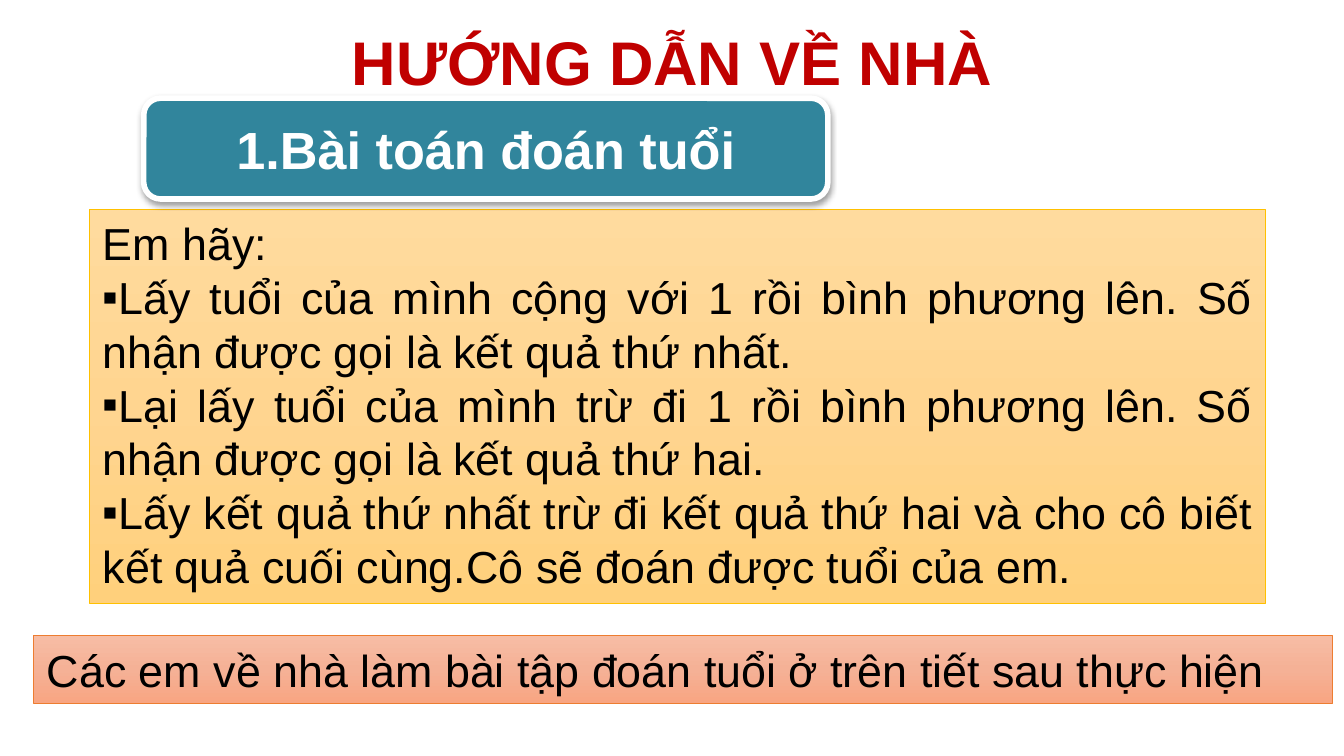
from lxml import etree
from pptx import Presentation
from pptx.dml.color import RGBColor
from pptx.enum.shapes import MSO_SHAPE
from pptx.enum.text import MSO_ANCHOR, MSO_AUTO_SIZE, PP_ALIGN
from pptx.oxml import parse_xml
from pptx.oxml.ns import nsdecls, qn
from pptx.util import Pt

RECTANGLE, ROUNDED = MSO_SHAPE.RECTANGLE, MSO_SHAPE.ROUNDED_RECTANGLE
LEFT, CENTER, JUSTIFY = PP_ALIGN.LEFT, PP_ALIGN.CENTER, PP_ALIGN.JUSTIFY
TOP, MIDDLE = MSO_ANCHOR.TOP, MSO_ANCHOR.MIDDLE
GROW = MSO_AUTO_SIZE.SHAPE_TO_FIT_TEXT

FONT = "Arial"
COLORS = {
    "title": "C00000",
    "text": "000000",
    "white": "FFFFFF",
    "teal": "31859C",
    "amber line": "FFC000",
    "orange line": "ED7D31",
}
AMBER = ("FFDB9E", "FFD590", "FFD07C")
SALMON = ("F7BDA5", "F5B196", "F8A582")

STEPS = [
    "Lấy tuổi của mình cộng với 1 rồi bình phương lên. Số nhận được gọi là kết quả thứ nhất.",
    "Lại lấy tuổi của mình trừ đi 1 rồi bình phương lên. Số nhận được gọi là kết quả thứ hai.",
    "Lấy kết quả thứ nhất trừ đi kết quả thứ hai và cho cô biết "
    "kết quả cuối cùng.Cô sẽ đoán được tuổi của em.",
]


def color(name):
    return RGBColor.from_string(COLORS[name])


def add_bullet(para):
    props = para._p.get_or_add_pPr()
    props.set("marL", "0")
    props.set("indent", str(Pt(-45)))
    etree.SubElement(props, qn("a:buFont"), typeface=FONT)
    etree.SubElement(props, qn("a:buChar"), char="▪")


def write(box, lines, size, ink, align=LEFT, bold=False, anchor=TOP, bulleted_from=None):
    """Fill a box with paragraphs, bulleted from the given index on."""
    frame = box.text_frame
    frame.word_wrap = True
    frame.vertical_anchor = anchor
    for index, line in enumerate(lines):
        para = frame.paragraphs[0] if index == 0 else frame.add_paragraph()
        para.text = line
        para.alignment = align
        if bulleted_from is not None and index >= bulleted_from:
            add_bullet(para)
        para.font.name = FONT
        para.font.size = Pt(size)
        para.font.bold = bold
        para.font.color.rgb = color(ink)


def add_panel(page, kind, left, top, width, height, line, line_width):
    panel = page.shapes.add_shape(kind, Pt(left), Pt(top), Pt(width), Pt(height))
    panel.shadow.inherit = False
    panel.line.color.rgb = color(line)
    panel.line.width = Pt(line_width)
    return panel


def fill_gradient(panel, shades):
    """Fill a panel from top to bottom with evenly spaced shades."""
    step = 100000 // (len(shades) - 1)
    stops = "".join(
        f'<a:gs pos="{index * step}"><a:srgbClr val="{shade}"/></a:gs>'
        for index, shade in enumerate(shades)
    )
    gradient = parse_xml(
        f'<a:gradFill {nsdecls("a")} rotWithShape="1"><a:gsLst>{stops}</a:gsLst>'
        '<a:lin ang="5400000" scaled="0"/></a:gradFill>'
    )
    panel._element.spPr.find(qn("a:prstGeom")).addnext(gradient)


def add_drop_shadow(panel):
    effects = panel._element.spPr.find(qn("a:effectLst"))
    effects.append(parse_xml(
        f'<a:outerShdw {nsdecls("a")} blurRad="{Pt(3.1)}" dist="{Pt(1.6)}" '
        'dir="5400000" rotWithShape="0"><a:srgbClr val="000000">'
        '<a:alpha val="38000"/></a:srgbClr></a:outerShdw>'
    ))


def add_gradient_panel(page, left, top, width, height, shades, line):
    panel = add_panel(page, RECTANGLE, left, top, width, height, line, 0.5)
    fill_gradient(panel, shades)
    panel.text_frame.auto_size = GROW
    return panel


def add_title(page, text):
    box = page.shapes.add_textbox(Pt(177.1), Pt(10.8), Pt(365.8), Pt(43.9))
    frame = box.text_frame
    frame.margin_left = frame.margin_right = Pt(3.6)
    frame.margin_top = frame.margin_bottom = Pt(2.16)
    frame.auto_size = GROW
    write(box, [text], 33, "title", CENTER, bold=True)


def add_heading(page, text):
    panel = add_panel(page, ROUNDED, 77, 52.6, 366.5, 54, "white", 3)
    panel.fill.solid()
    panel.fill.fore_color.rgb = color("teal")
    add_drop_shadow(panel)
    write(panel, [text], 28, "white", CENTER, bold=True, anchor=MIDDLE)


def main():
    deck = Presentation()
    deck.slide_width, deck.slide_height = Pt(720), Pt(405)
    page = deck.slides.add_slide(deck.slide_layouts[6])

    steps = add_gradient_panel(page, 48, 112.2, 630, 211, AMBER, "amber line")
    write(steps, ["Em hãy:", *STEPS], 24, "text", JUSTIFY, bulleted_from=1)

    add_title(page, "HƯỚNG DẪN VỀ NHÀ")
    add_heading(page, "1.Bài toán đoán tuổi")

    homework = add_gradient_panel(page, 18, 340.5, 696, 36.3, SALMON, "orange line")
    write(homework, ["Các em về nhà làm bài tập đoán tuổi ở trên tiết sau thực hiện"], 24, "text")

    deck.save("out.pptx")


if __name__ == "__main__":
    main()
